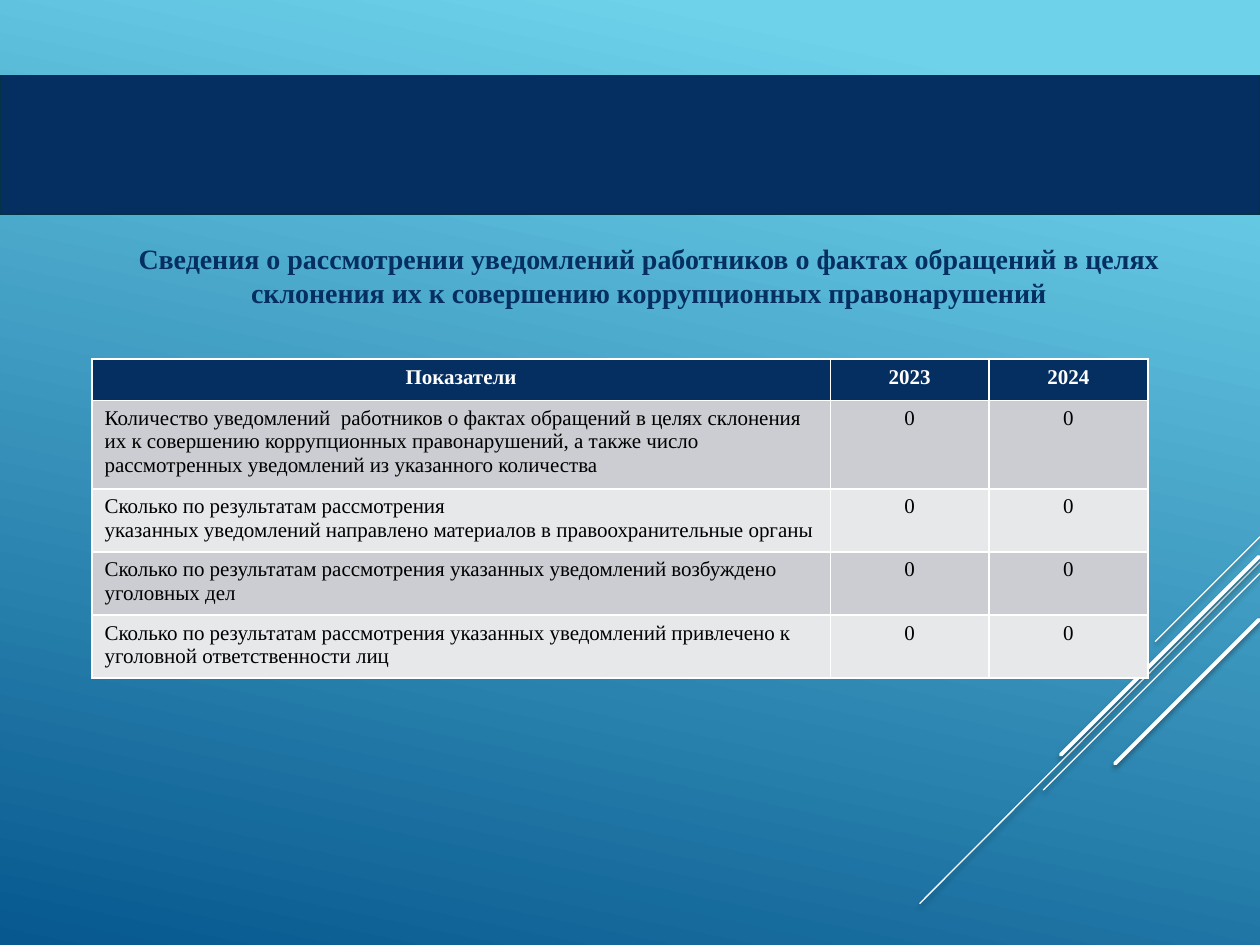
from lxml.etree import SubElement
from pptx import Presentation
from pptx.dml.color import RGBColor
from pptx.enum.shapes import MSO_CONNECTOR, MSO_SHAPE
from pptx.enum.text import PP_ALIGN
from pptx.oxml.ns import qn
from pptx.util import Inches, Pt

COLORS = {
    "sky": "6ED2EB", "deep": "06588E", "navy": "052F61", "edge": "043148",
    "white": "FFFFFF", "black": "000000", "odd": "CCCDD2", "even": "E7E8EA",
}
FONT = "Times New Roman"


def rgb(name):
    return RGBColor.from_string(COLORS[name])


def write(p, text, size, color, bold=False, align=PP_ALIGN.CENTER):
    p.alignment = align
    r = p.add_run()
    r.text = text
    for key, value in {"name": FONT, "size": Pt(size), "bold": bold}.items():
        setattr(r.font, key, value)
    r.font.color.rgb = rgb(color)


prs = Presentation()
prs.slide_width, prs.slide_height = Inches(10), Inches(7.5)
s = prs.slides.add_slide(prs.slide_layouts[6])

# Background gradient
fill = s.background.fill
fill.gradient()
fill.gradient_angle = 258
for stop, position, color in zip(fill.gradient_stops, (0.1, 1), ("sky", "deep")):
    stop.position = position
    stop.color.rgb = rgb(color)

# Diagonal accent lines with a soft shadow
for x1, y1, x2, y2, width in (
    (10, 4.26, 9.17, 5.09, 0.75),
    (10, 4.46, 7.3, 7.17, 0.75),
    (10, 4.55, 8.28, 6.27, 0.75),
    (9.99, 4.42, 8.42, 5.99, 2.25),
    (9.99, 4.92, 8.85, 6.06, 2.25),
):
    line = s.shapes.add_connector(
        MSO_CONNECTOR.STRAIGHT, Inches(x1), Inches(y1), Inches(x2), Inches(y2))
    line.line.color.rgb = rgb("white")
    line.line.width = Pt(width)
    spPr = line._element.spPr
    spPr.find(qn("a:ln")).set("cap", "rnd")
    effects = SubElement(spPr, qn("a:effectLst"))
    shadow = SubElement(effects, qn("a:outerShdw"), blurRad=str(Pt(3.1)),
                        dist=str(Pt(1.6)), dir="5400000", rotWithShape="0")
    tint = SubElement(shadow, qn("a:srgbClr"), val=COLORS["black"])
    SubElement(tint, qn("a:alpha"), val="38000")

# Header band
band = s.shapes.add_shape(
    MSO_SHAPE.FLOWCHART_PROCESS, 0, Inches(0.6), Inches(10), Inches(1.1))
band.shadow.inherit = False
band.fill.solid()
band.fill.fore_color.rgb = rgb("navy")
band.line.color.rgb = rgb("edge")
band.line.width = Pt(1)

# Title
title = s.shapes.add_textbox(Inches(0.58), Inches(1.87), Inches(9.14), Inches(0.63))
tf = title.text_frame
tf.word_wrap = True
write(tf.paragraphs[0],
      "Сведения о рассмотрении уведомлений работников о фактах обращений в целях "
      "склонения их к совершению коррупционных правонарушений",
      16, "navy", bold=True)

# Table: the default style supplies the white borders
rows = [
    ("Показатели", "2023", "2024"),
    ("Количество уведомлений  работников о фактах обращений в целях склонения их "
     "к совершению коррупционных правонарушений, а также число рассмотренных "
     "уведомлений из указанного количества", "0", "0"),
    ("Сколько по результатам рассмотрения\n"
     "указанных уведомлений направлено материалов в правоохранительные органы",
     "0", "0"),
    ("Сколько по результатам рассмотрения указанных уведомлений возбуждено "
     "уголовных дел", "0", "0"),
    ("Сколько по результатам рассмотрения указанных уведомлений привлечено к "
     "уголовной ответственности лиц", "0", "0"),
]
table = s.shapes.add_table(len(rows), 3, Inches(0.73), Inches(2.85),
                           Inches(8.38), Inches(2.53)).table
for column, width in zip(table.columns, (5.86, 1.26, 1.26)):
    column.width = Inches(width)
for row, height in zip(table.rows, (0.33, 0.7, 0.5, 0.5, 0.5)):
    row.height = Inches(height)

for i, texts in enumerate(rows):
    header = i == 0
    for j, text in enumerate(texts):
        cell = table.cell(i, j)
        cell.fill.solid()
        cell.fill.fore_color.rgb = rgb("navy" if header else "odd" if i % 2 else "even")
        align = PP_ALIGN.CENTER if header or j else PP_ALIGN.LEFT
        tf = cell.text_frame
        for k, part in enumerate(text.split("\n")):
            p = tf.add_paragraph() if k else tf.paragraphs[0]
            write(p, part, 12, "white" if header else "black", header, align)

prs.save("out.pptx")
